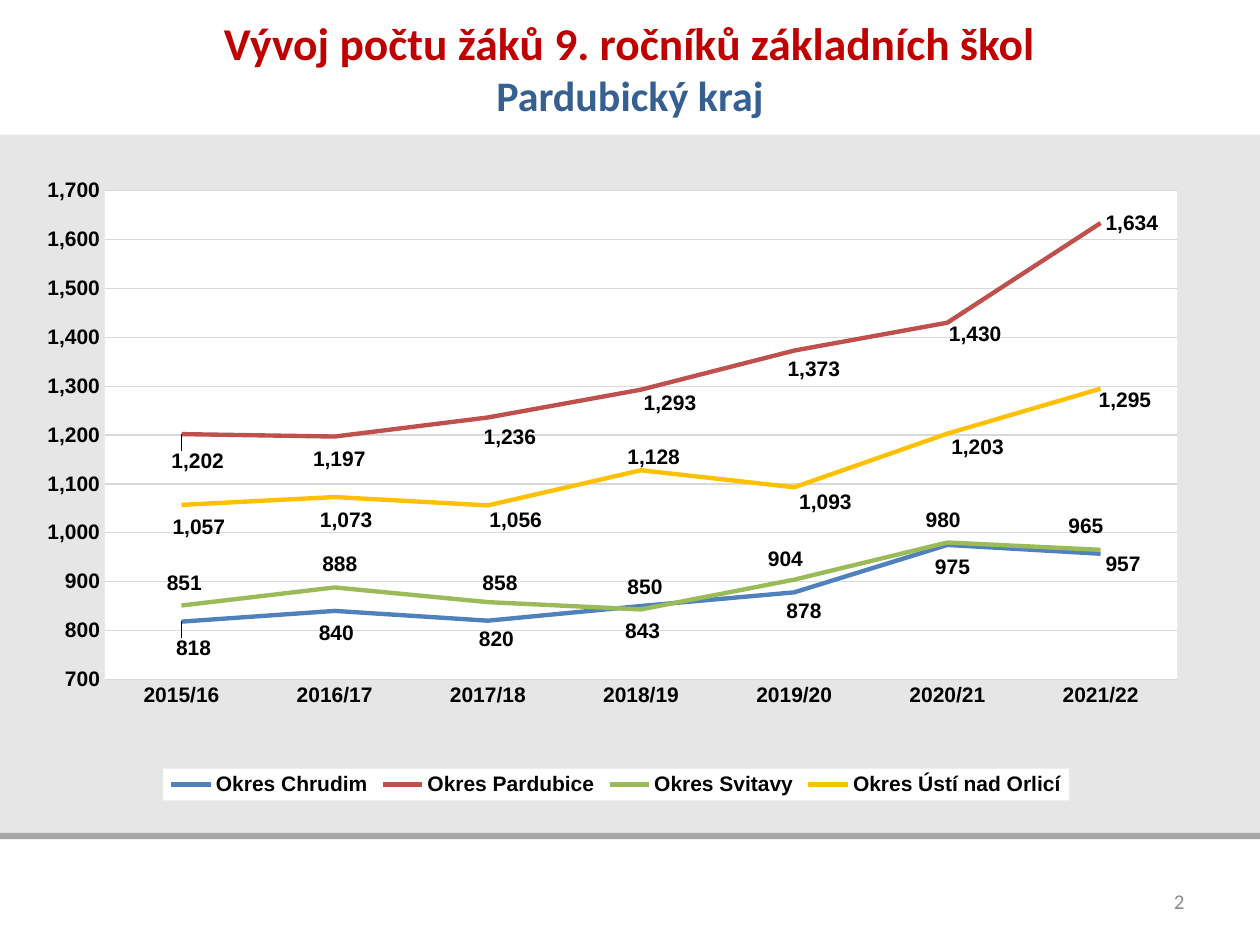
from dataclasses import dataclass

from lxml import etree
from pptx import Presentation
from pptx import util as u
from pptx.chart.data import CategoryChartData
from pptx.dml.color import RGBColor
from pptx.enum import chart as ch, shapes, text
from pptx.oxml import parse_xml
from pptx.oxml.ns import nsdecls, qn

WHITE = RGBColor(0xFF, 0xFF, 0xFF)
BLACK = RGBColor(0, 0, 0)
PAGE = RGBColor(0xE6, 0xE6, 0xE6)
RULE = RGBColor(0xA6, 0xA6, 0xA6)
GRID = RGBColor(0xD9, 0xD9, 0xD9)
RED = RGBColor(0xC0, 0x00, 0x00)
NAVY = RGBColor(0x37, 0x60, 0x92)
MUTED = RGBColor(0x8B, 0x8B, 0x8B)
NUMBER = "#,##0"


@dataclass(frozen=True)
class Box:
    """Place and size in percent of the slide."""
    x: float
    y: float
    w: float
    h: float

    def emu(self) -> list[int]:
        sides = (prs.slide_width, prs.slide_height) * 2
        return [round(v * side / 100) for v, side in zip((self.x, self.y, self.w, self.h), sides)]


@dataclass(frozen=True)
class District:
    """One line; shifts move each label from the right of its point, in percent of the chart."""
    name: str
    color: RGBColor
    values: tuple[int, ...]
    shifts: tuple[tuple[float, float], ...]


YEARS = [f"{y}/{y - 1999}" for y in range(2015, 2022)]
DISTRICTS = [
    District("Okres Chrudim", RGBColor(0x4F, 0x81, 0xBD), (818, 840, 820, 850, 878, 975, 957),
             ((-0.9, 4.3), (-1.8, 3.6), (-1.2, 3), (-1.6, -3), (-1.1, 3), (-1.5, 3.6), (0, 1.6))),
    District("Okres Pardubice", RGBColor(0xC0, 0x50, 0x4D), (1202, 1197, 1236, 1293, 1373, 1430, 1634),
             ((-1.3, 4.3), (-2.3, 3.6), (-0.8, 3.2), (-0.2, 2.2), (-1, 3), (-0.3, 1.9), (0, 0))),
    District("Okres Svitavy", RGBColor(0x9B, 0xBB, 0x59), (851, 888, 858, 843, 904, 980, 965),
             ((-1.7, -3.5), (-1.5, -3.6), (-0.9, -3), (-1.8, 3.5), (-2.7, -3.3), (-2.3, -3.6), (-3.2, -3.8))),
    District("Okres Ústí nad Orlicí", RGBColor(0xFF, 0xC0, 0x00), (1057, 1073, 1056, 1128, 1093, 1203, 1295),
             ((-1.2, 3.6), (-1.7, 3.6), (-0.3, 2.4), (-1.6, -2.1), (0, 2.4), (-0.1, 2.2), (-0.6, 1.9))),
]


def add_band(s, box: Box, color: RGBColor) -> None:
    sp = s.shapes.add_shape(shapes.MSO_SHAPE.RECTANGLE, *box.emu())
    sp.shadow.inherit = False
    sp.fill.solid()
    sp.fill.fore_color.rgb = color
    sp.line.fill.background()


def add_text(p, words: str, *, size: float, color: RGBColor, bold: bool = False) -> None:
    r = p.add_run()
    r.text = words
    r.font.name, r.font.size, r.font.bold = "Calibri", u.Pt(size), bold
    r.font.color.rgb = color


def add_paragraph_box(s, box: Box, align, inset: float = 0):
    """Add a text box, centred vertically, and return its paragraph."""
    tf = s.shapes.add_textbox(*box.emu()).text_frame
    tf.word_wrap = True
    tf.vertical_anchor = text.MSO_ANCHOR.MIDDLE
    tf.margin_left = tf.margin_right = u.Inches(inset)
    tf.margin_top = tf.margin_bottom = u.Inches(inset / 2)
    p = tf.paragraphs[0]
    p.alignment = align
    return p


def manual_layout(**settings):
    """Build a c:layout from values such as x=0.1 or xMode='edge'."""
    layout = parse_xml(f"<c:layout {nsdecls('c')}><c:manualLayout/></c:layout>")
    for tag, value in settings.items():
        etree.SubElement(layout[0], qn(f"c:{tag}")).set("val", str(value))
    return layout


def white_fill():
    return parse_xml(f'<c:spPr {nsdecls("c", "a")}><a:solidFill><a:srgbClr val="{WHITE}"/>'
                     '</a:solidFill></c:spPr>')


def style_axes(chart) -> None:
    cat, val = chart.category_axis, chart.value_axis
    for axis in (cat, val):
        axis.major_tick_mark = axis.minor_tick_mark = ch.XL_TICK_MARK.NONE
    val.minimum_scale, val.maximum_scale, val.major_unit = 700, 1700, 100
    val.tick_labels.number_format = NUMBER
    val.tick_labels.number_format_is_linked = False
    val.format.line.fill.background()
    for line in (cat.format.line, val.major_gridlines.format.line):
        line.color.rgb = GRID
        line.width = u.Pt(0.75)


def style_series(series, district: District) -> None:
    series.smooth = False
    series.marker.style = ch.XL_MARKER_STYLE.NONE
    series.format.line.color.rgb = district.color
    series.format.line.width = u.Pt(2.5)
    labels = series.data_labels
    labels.show_value = True
    labels.number_format, labels.number_format_is_linked = NUMBER, False
    labels.position = ch.XL_LABEL_POSITION.RIGHT
    for i in range(len(YEARS)):
        series.points[i].data_label.position = ch.XL_LABEL_POSITION.RIGHT


def add_line_chart(s, box: Box) -> None:
    data = CategoryChartData(number_format=NUMBER)
    data.categories = YEARS
    for d in DISTRICTS:
        data.add_series(d.name, d.values)
    chart = s.shapes.add_chart(ch.XL_CHART_TYPE.LINE, *box.emu(), data).chart
    chart.has_title = False
    chart.font.name, chart.font.size, chart.font.bold = "Arial", u.Pt(12), True
    chart.font.color.rgb = BLACK
    chart.plots[0].vary_by_categories = False
    style_axes(chart)
    for series, d in zip(chart.plots[0].series, DISTRICTS):
        style_series(series, d)

    # Label offsets
    for ser, d in zip(chart.element.xpath(".//c:ser"), DISTRICTS):
        for label, (dx, dy) in zip(ser.xpath("./c:dLbls/c:dLbl"), d.shifts):
            label.find(qn("c:idx")).addnext(manual_layout(x=dx / 100, y=dy / 100))

    # Plot area
    plot = chart.element.xpath(".//c:plotArea")[0]
    for old in plot.findall(qn("c:layout")):
        plot.remove(old)
    plot.insert(0, manual_layout(layoutTarget="inner", xMode="edge", yMode="edge",
                                 x=0.06, y=0.031, w=0.923, h=0.774))
    plot.append(white_fill())

    # Legend
    chart.has_legend = True
    chart.legend.position = ch.XL_LEGEND_POSITION.BOTTOM
    chart.legend.include_in_layout = False
    legend = chart.element.xpath(".//c:legend")[0]
    for old in legend.findall(qn("c:layout")):
        legend.remove(old)
    legend.find(qn("c:legendPos")).addnext(
        manual_layout(xMode="edge", yMode="edge", x=0.11, y=0.95, w=0.78, h=0.05))
    legend.find(qn("c:overlay")).addnext(white_fill())


prs = Presentation()
prs.slide_width, prs.slide_height = u.Inches(10), u.Inches(7.5)
s = prs.slides.add_slide(prs.slide_layouts[6])
s.background.fill.solid()
s.background.fill.fore_color.rgb = PAGE

# Footer, rule and header bands
HEADER = Box(0, 0, 100, 14.27)
add_band(s, Box(-1.2, 88.8, 102.4, 11.6), WHITE)
add_band(s, Box(-1.2, 88.13, 102.4, 0.67), RULE)
add_band(s, HEADER, WHITE)

# Title
p = add_paragraph_box(s, HEADER, text.PP_ALIGN.CENTER)
add_text(p, "Vývoj počtu žáků 9. ročníků základních škol", size=26, color=RED, bold=True)
p.add_line_break()
add_text(p, "Pardubický kraj", size=24, color=NAVY, bold=True)

# Page number
p = add_paragraph_box(s, Box(71.7, 92.67, 23.3, 5.33), text.PP_ALIGN.RIGHT, inset=0.1)
add_text(p, "2", size=12, color=MUTED)

add_line_chart(s, Box(2.8, 18.13, 92.2, 66.8))
prs.save("out.pptx")
